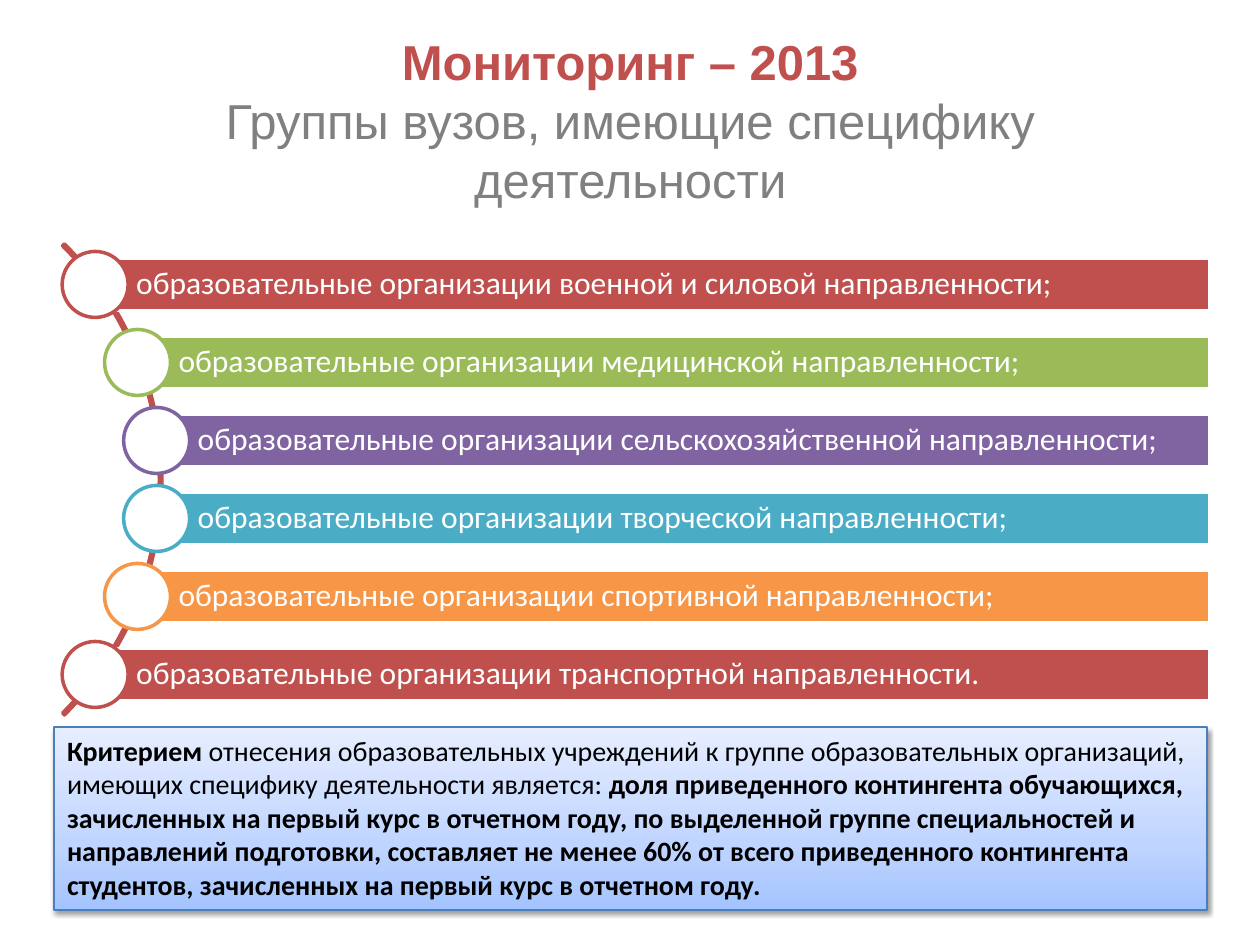
from dataclasses import dataclass
from math import sqrt

from lxml.etree import SubElement
from pptx import Presentation
from pptx.dml.color import RGBColor
from pptx.enum.shapes import MSO_SHAPE
from pptx.enum.text import MSO_ANCHOR, PP_ALIGN
from pptx.oxml.ns import qn
from pptx.util import Pt

EMU_PER_PX = 914400 / 126


@dataclass(frozen=True)
class Theme:
    """Colours, fonts and type sizes of the slide."""
    red: str = "C0504D"
    green: str = "9BBB59"
    purple: str = "8064A2"
    teal: str = "4BACC6"
    orange: str = "F79646"
    grey: str = "808080"
    white: str = "FFFFFF"
    black: str = "000000"
    panel_line: str = "4B7EBC"
    panel_stops: tuple = ((0, "A4C4FF"), (35, "BFD4FF"), (100, "E6EEFF"))
    title_font: str = "Arial"
    body_font: str = "Calibri"
    title_size: int = 28
    item_size: int = 18
    criterion_size: int = 16


THEME = Theme()
GROUPS = [
    ("образовательные организации военной и силовой направленности;", THEME.red),
    ("образовательные организации медицинской направленности;", THEME.green),
    ("образовательные организации сельскохозяйственной направленности;", THEME.purple),
    ("образовательные организации творческой направленности;", THEME.teal),
    ("образовательные организации спортивной направленности;", THEME.orange),
    ("образовательные организации транспортной направленности.", THEME.red),
]
CRITERION = [
    ("Критерием ", THEME.black, True),
    ("отнесения образовательных учреждений к группе образовательных организаций, "
     "имеющих специфику деятельности является: ", THEME.black, False),
    ("доля приведенного контингента обучающихся, зачисленных на первый курс в отчетном году, "
     "по выделенной группе специальностей и направлений подготовки, составляет не менее 60% "
     "от всего приведенного контингента студентов, зачисленных на первый курс в отчетном году.",
     THEME.black, True),
]
TITLE = [
    ("Мониторинг – 2013\n", THEME.red, True),
    ("Группы вузов, имеющие специфику деятельности", THEME.grey, False),
]


def px(length):
    """Turn pixels into EMU."""
    return round(length * EMU_PER_PX)


def write_text(shape, runs, *, size, font, align=PP_ALIGN.LEFT, anchor=MSO_ANCHOR.MIDDLE,
               left_inset=13, line_spacing=1.0):
    """Fill a shape with one paragraph of (text, colour, bold) runs."""
    frame = shape.text_frame
    frame.word_wrap = True
    frame.vertical_anchor = anchor
    frame.margin_left = px(left_inset)
    paragraph = frame.paragraphs[0]
    paragraph.alignment = align
    paragraph.line_spacing = line_spacing
    for text, colour, bold in runs:
        run = paragraph.add_run()
        run.text = text.rstrip("\n")
        run.font.size = Pt(size)
        run.font.name = font
        run.font.bold = bold
        run.font.color.rgb = RGBColor.from_string(colour)
        if text.endswith("\n"):
            paragraph.add_line_break()


def add_figure(slide, kind, box, *, line, fill=None, line_width=2):
    """Add a preset shape without shadow."""
    shape = slide.shapes.add_shape(kind, *map(px, box))
    shape.shadow.inherit = False
    if fill:
        shape.fill.solid()
        shape.fill.fore_color.rgb = RGBColor.from_string(fill)
    else:
        shape.fill.background()
    shape.line.color.rgb = RGBColor.from_string(line)
    shape.line.width = Pt(line_width)
    return shape


def add_title(slide, box):
    """Add the centred two-colour title."""
    shape = slide.shapes.add_textbox(*map(px, box))
    write_text(shape, TITLE, size=THEME.title_size, font=THEME.title_font, align=PP_ALIGN.CENTER)


def add_group_list(slide, box, *, pitch=78, bar_height=52, dot=66, radius=333, arc_inset=3):
    """Add coloured bars whose dots follow an arc at the left of the box."""
    left, top, width, height = box
    centre_x, centre_y = left - 233, top + height / 2
    arc = add_figure(slide, MSO_SHAPE.BLOCK_ARC,
                     (centre_x - radius, centre_y - radius, 2 * radius, 2 * radius), line=THEME.red)
    for index, value in enumerate((189, 27, 0.004)):
        arc.adjustments[index] = value
    for index, (text, colour) in enumerate(GROUPS):
        offset = (index - (len(GROUPS) - 1) / 2) * pitch
        x = centre_x + sqrt((radius - arc_inset) ** 2 - offset ** 2)
        y = centre_y + offset
        bar = add_figure(slide, MSO_SHAPE.RECTANGLE,
                         (x, y - bar_height / 2, left + width - x, bar_height),
                         fill=colour, line=THEME.white)
        write_text(bar, [(text, THEME.white, False)], size=THEME.item_size,
                   font=THEME.body_font, left_inset=41, line_spacing=0.9)
        add_figure(slide, MSO_SHAPE.OVAL, (x - dot / 2, y - dot / 2, dot, dot),
                   fill=THEME.white, line=colour)


def add_colour(parent, colour):
    """Append an RGB colour element."""
    return SubElement(parent, qn("a:srgbClr"), val=colour)


def add_criterion(slide, box):
    """Add the shaded panel with the criterion."""
    panel = add_figure(slide, MSO_SHAPE.RECTANGLE, box, line=THEME.panel_line, line_width=0.75)
    panel.fill.gradient()
    panel.fill.gradient_angle = 90
    properties = panel.element.spPr
    stops = properties.find(".//" + qn("a:gsLst"))
    for stop in list(stops):
        stops.remove(stop)
    for position, colour in THEME.panel_stops:
        add_colour(SubElement(stops, qn("a:gs"), pos=str(position * 1000)), colour)
    shadow = SubElement(properties.find(qn("a:effectLst")), qn("a:outerShdw"),
                        blurRad="40000", dist="20000", dir="5400000", rotWithShape="0")
    SubElement(add_colour(shadow, THEME.black), qn("a:alpha"), val="38000")
    write_text(panel, CRITERION, size=THEME.criterion_size, font=THEME.body_font,
               anchor=MSO_ANCHOR.TOP)


def main():
    """Build and save the slide."""
    presentation = Presentation()
    presentation.slide_width, presentation.slide_height = px(1260), px(945)
    slide = presentation.slides.add_slide(presentation.slide_layouts[6])
    add_title(slide, (63, 38, 1134, 164))
    add_criterion(slide, (54, 727, 1153, 183))
    add_group_list(slide, (62, 252, 1148, 455))
    presentation.save("out.pptx")


if __name__ == "__main__":
    main()
